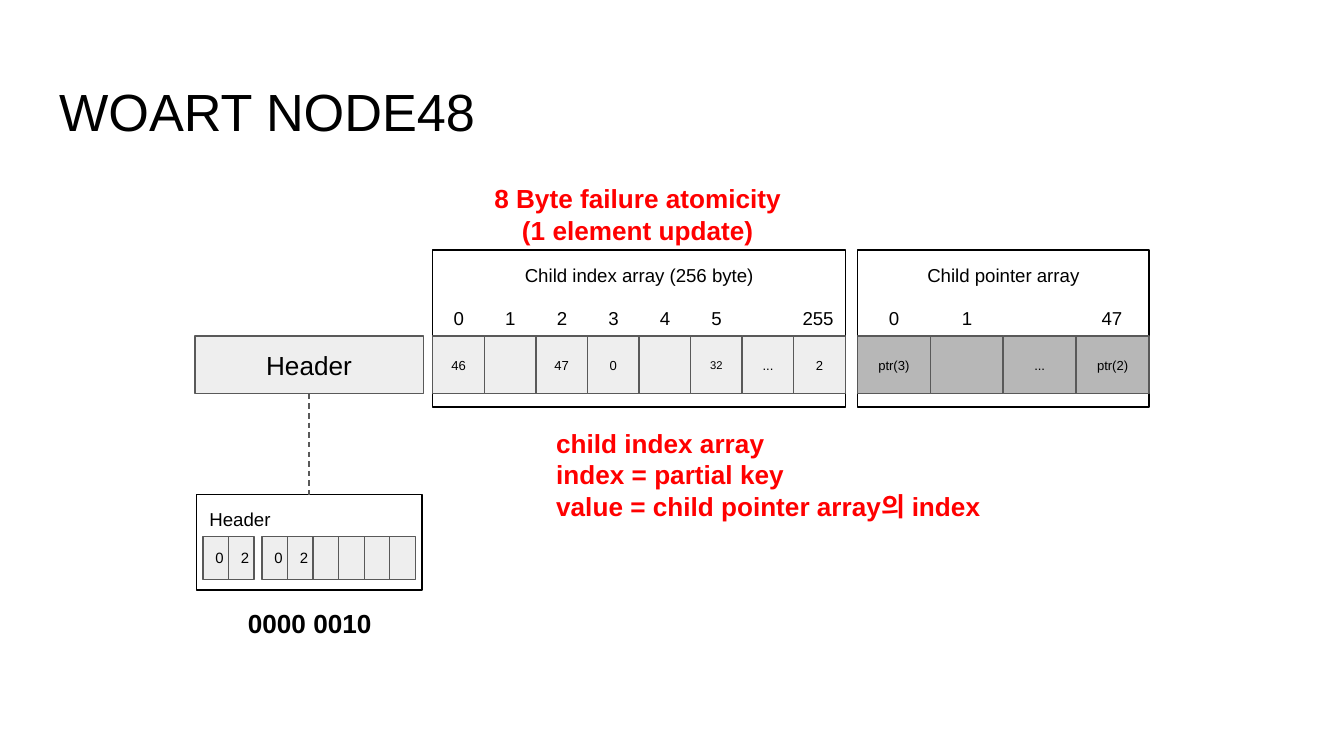
"""Build the WOART NODE48 layout slide."""
from lxml import etree
from pptx import Presentation
from pptx import util as u
from pptx.dml.color import RGBColor
from pptx.enum import dml, shapes, text
from pptx.oxml.ns import qn

BLACK = RGBColor(0, 0, 0)
RED = RGBColor(255, 0, 0)
EDGE = RGBColor(0x59, 0x59, 0x59)
LIGHT = RGBColor(0xEE, 0xEE, 0xEE)
DARK = RGBColor(0xB7, 0xB7, 0xB7)
LEFT, MID = text.PP_ALIGN.LEFT, text.PP_ALIGN.CENTER
TOP, CENTRE = text.MSO_ANCHOR.TOP, text.MSO_ANCHOR.MIDDLE

TITLE = ("WOART NODE48", (0.34, 0.49, 9.32, 0.63))
HEADER = ("Header", (1.45, 2.5, 1.7, 0.43))
DETAIL = ("Header", (1.46, 3.68, 1.68, 0.71))
FIELDS = [(1.51, ["0", "2"]), (1.95, ["0", "2", "", "", "", ""])]
ARRAYS = [
    {"name": "Child index array (256 byte)", "left": 3.22, "width": 3.07, "fill": LIGHT,
     "keys": ["0", "1", "2", "3", "4", "5", "", "255"],
     "cells": ["46", "", "47", "0", "", "32", "...", "2"], "small": {"32": 6}},
    {"name": "Child pointer array", "left": 6.38, "width": 2.17, "fill": DARK,
     "keys": ["0", "1", "", "47"],
     "cells": ["ptr(3)", "", "...", "ptr(2)"], "small": {}},
]
NOTES = [
    ("0000 0010", (1.48, 4.42, 1.65, 0.36), BLACK, MID),
    ("8 Byte failure atomicity (1 element update)", (3.55, 1.26, 2.39, 0.46), RED, MID),
    ("child index array\vindex = partial key\nvalue = child pointer array의 index",
     (4.04, 3.08, 3.7, 0.46), RED, LEFT),
]
KEY_WIDTH = {1: 0.27, 2: 0.36, 3: 0.45}
FIELD_STEP = 0.19


def span(box):
    return [u.Inches(n) for n in box]


def write(item, words, size, color=BLACK, align=LEFT, anchor=TOP, bold=False):
    frame = item.text_frame
    frame.text = words
    pad = u.Inches(0.1)
    look = {"word_wrap": True, "auto_size": text.MSO_AUTO_SIZE.NONE, "vertical_anchor": anchor,
            "margin_left": pad, "margin_top": pad, "margin_right": pad, "margin_bottom": pad}
    for key, value in look.items():
        setattr(frame, key, value)
    for para in frame.paragraphs:
        para.alignment = align
        for run in para.runs:
            for key, value in {"name": "Arial", "size": u.Pt(size), "bold": bold}.items():
                setattr(run.font, key, value)
            run.font.color.rgb = color


def rect(home, box, words, size, fill=None, edge=EDGE, align=MID, anchor=CENTRE):
    item = home.add_shape(shapes.MSO_SHAPE.RECTANGLE, *span(box))
    item.shadow.inherit = False
    if fill is None:
        item.fill.background()
    else:
        item.fill.solid()
        item.fill.fore_color.rgb = fill
    item.line.color.rgb = edge
    item.line.width = u.Pt(0.75)
    if words:
        write(item, words, size, align=align, anchor=anchor)
    return item


def label(home, box, words, size, **look):
    write(home.add_textbox(*span(box)), words, size, **look)


def array(home, data):
    left, width = data["left"], data["width"]
    rect(home, (left, 1.86, width, 1.17), data["name"], 10, edge=BLACK, anchor=TOP)
    step = width / len(data["cells"])
    for i, (key, cell) in enumerate(zip(data["keys"], data["cells"])):
        x = left + i * step
        rect(home, (x, 2.5, step, 0.43), cell, data["small"].get(cell, 7), data["fill"])
        if key:
            wide = KEY_WIDTH[len(key)]
            label(home, (x + (step - wide) / 2, 2.18, wide, 0.32), key, 10)


def detail(home):
    group = home.add_group_shape().shapes
    words, box = DETAIL
    panel = rect(group, box, words, 10, edge=BLACK, align=LEFT, anchor=TOP)
    for left, cells in FIELDS:
        for i, cell in enumerate(cells):
            rect(group, (left + i * FIELD_STEP, 3.99, FIELD_STEP, 0.32), cell, 8, LIGHT)
    return panel


def link(home, start, end):
    line = home.add_connector(shapes.MSO_CONNECTOR.STRAIGHT, 0, 0, 0, 0)
    line.begin_connect(start, 2)
    line.end_connect(end, 0)
    line.line.color.rgb = EDGE
    line.line.width = u.Pt(0.75)
    line.line.dash_style = dml.MSO_LINE.DASH
    etree.SubElement(line._element.spPr, qn("a:effectLst"))


def main():
    deck = Presentation()
    deck.slide_width = u.Inches(10)
    deck.slide_height = deck.slide_width * 9 // 16
    home = deck.slides.add_slide(deck.slide_layouts[5]).shapes
    words, box = TITLE
    for key, value in zip(("left", "top", "width", "height"), span(box)):
        setattr(home.title, key, value)
    write(home.title, words, 28)
    panel = detail(home)
    for data in ARRAYS:
        array(home, data)
    words, box = HEADER
    link(home, rect(home, box, words, 14, LIGHT), panel)
    for words, box, color, align in NOTES:
        label(home, box, words, 14, color=color, align=align, bold=True)
    deck.save("out.pptx")


if __name__ == "__main__":
    main()
